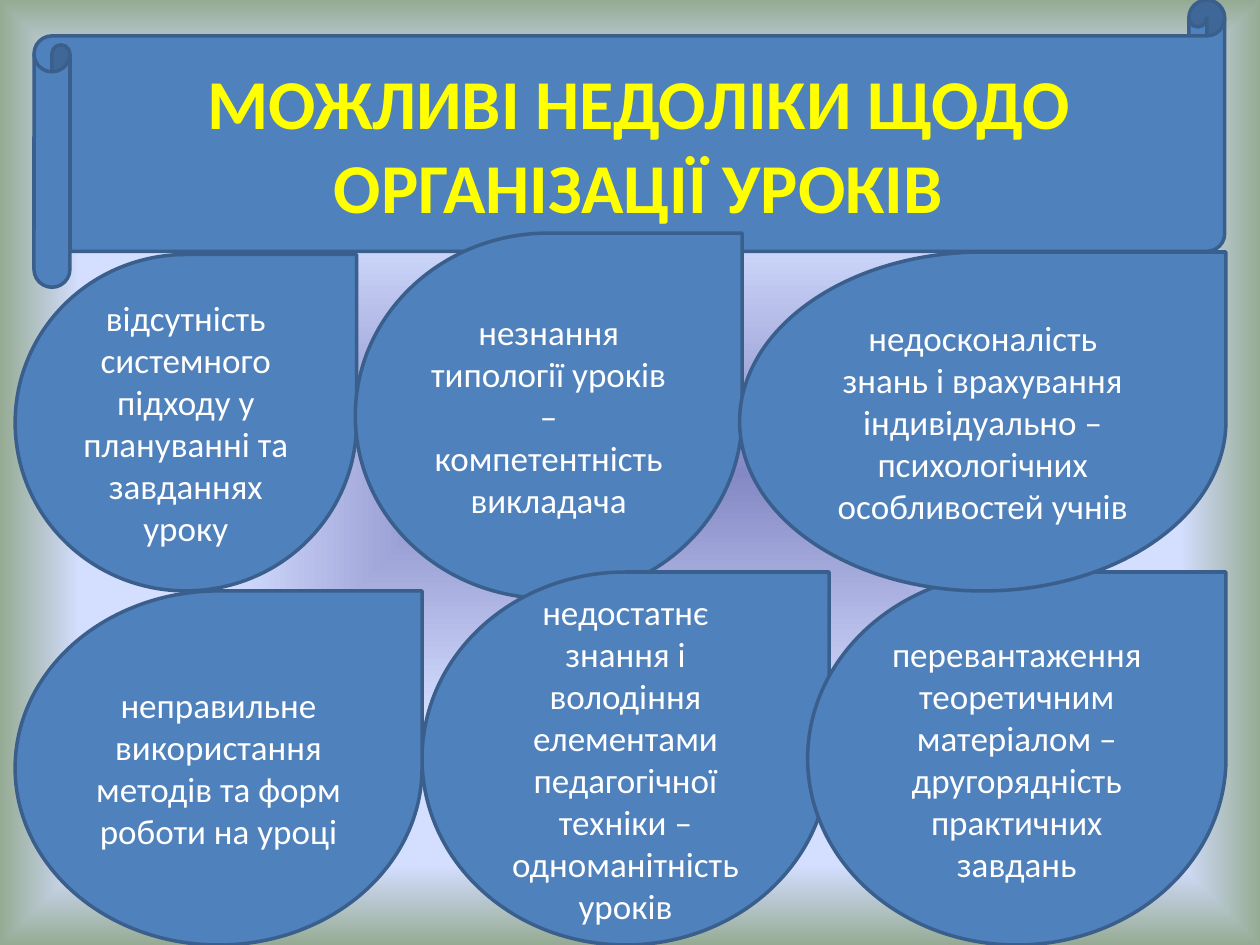
from pptx import Presentation
from pptx import util as u
from pptx.dml.color import RGBColor
from pptx.enum import shapes, text
from pptx.oxml import parse_xml
from pptx.oxml.ns import nsdecls

WIDE, HIGH = 10, 7.5
FILL, EDGE, WHITE, YELLOW = "4F81BD", "3A5F8C", "FFFFFF", "FFFF00"
GLOW = [(0, "8488C4"), (53, "D4DEFF"), (83, "D4DEFF"), (100, "96AB94")]

TITLE = "МОЖЛИВІ НЕДОЛІКИ ЩОДО ОРГАНІЗАЦІЇ УРОКІВ"
BANNER = (0.27, 0, 9.45, 2.28)

# Edges of each drop: left, top, right, bottom; later drops overlap earlier ones
LEFT, RIGHT, MID = 0.12, 9.73, 4.69
LOW = 4.54
DROPS = [
    ("відсутність системного підходу у плануванні та завданнях уроку",
     (LEFT, 2.02, 2.83, MID)),
    ("незнання типології уроків – компетентність викладача",
     (2.82, 1.85, 5.89, 4.75)),
    ("недостатнє знання і володіння елементами педагогічної техніки – "
     "одноманітність уроків", (3.35, LOW, 6.58, HIGH)),
    ("неправильне використання методів та форм роботи на уроці",
     (LEFT, MID, 3.35, HIGH)),
    ("перевантаження теоретичним матеріалом – другорядність практичних завдань",
     (6.41, LOW, RIGHT, HIGH)),
    ("недосконалість знань і врахування індивідуально – психологічних "
     "особливостей учнів", (5.87, 2, RIGHT, MID)),
]


def rgb(code):
    return RGBColor.from_string(code)


def paint(slide, stops):
    """Fill the background with a gradient that spreads from the centre."""
    marks = "".join(
        f'<a:gs pos="{pos * 1000}"><a:srgbClr val="{code}"/></a:gs>'
        for pos, code in stops)
    slide.element.cSld.insert(0, parse_xml(
        f'<p:bg {nsdecls("p", "a")}><p:bgPr><a:gradFill rotWithShape="1">'
        f'<a:gsLst>{marks}</a:gsLst><a:path path="shape">'
        '<a:fillToRect l="50000" t="50000" r="50000" b="50000"/></a:path>'
        '</a:gradFill><a:effectLst/></p:bgPr></p:bg>'))


def write(shape, words, size=20, color=WHITE, bold=False):
    frame = shape.text_frame
    frame.word_wrap = True
    frame.vertical_anchor = text.MSO_ANCHOR.MIDDLE
    para = frame.paragraphs[0]
    para.alignment = text.PP_ALIGN.CENTER
    run = para.add_run()
    run.text = words
    font = run.font
    font.name, font.size, font.bold = "Calibri", u.Pt(size), bold
    font.color.rgb = rgb(color)


def draw(slide, kind, box, words, **style):
    shape = slide.shapes.add_shape(kind, *map(u.Inches, box))
    shape.shadow.inherit = False
    shape.fill.solid()
    shape.fill.fore_color.rgb = rgb(FILL)
    shape.line.color.rgb = rgb(EDGE)
    shape.line.width = u.Pt(2)
    write(shape, words, **style)


def main():
    deck = Presentation()
    deck.slide_width, deck.slide_height = u.Inches(WIDE), u.Inches(HIGH)
    slide = deck.slides.add_slide(deck.slide_layouts[6])
    paint(slide, GLOW)
    kinds = shapes.MSO_SHAPE
    draw(slide, kinds.HORIZONTAL_SCROLL, BANNER, TITLE,
         size=40, color=YELLOW, bold=True)
    for words, (left, top, right, base) in DROPS:
        draw(slide, kinds.TEAR, (left, top, right - left, base - top), words)
    deck.save("out.pptx")


if __name__ == "__main__":
    main()
